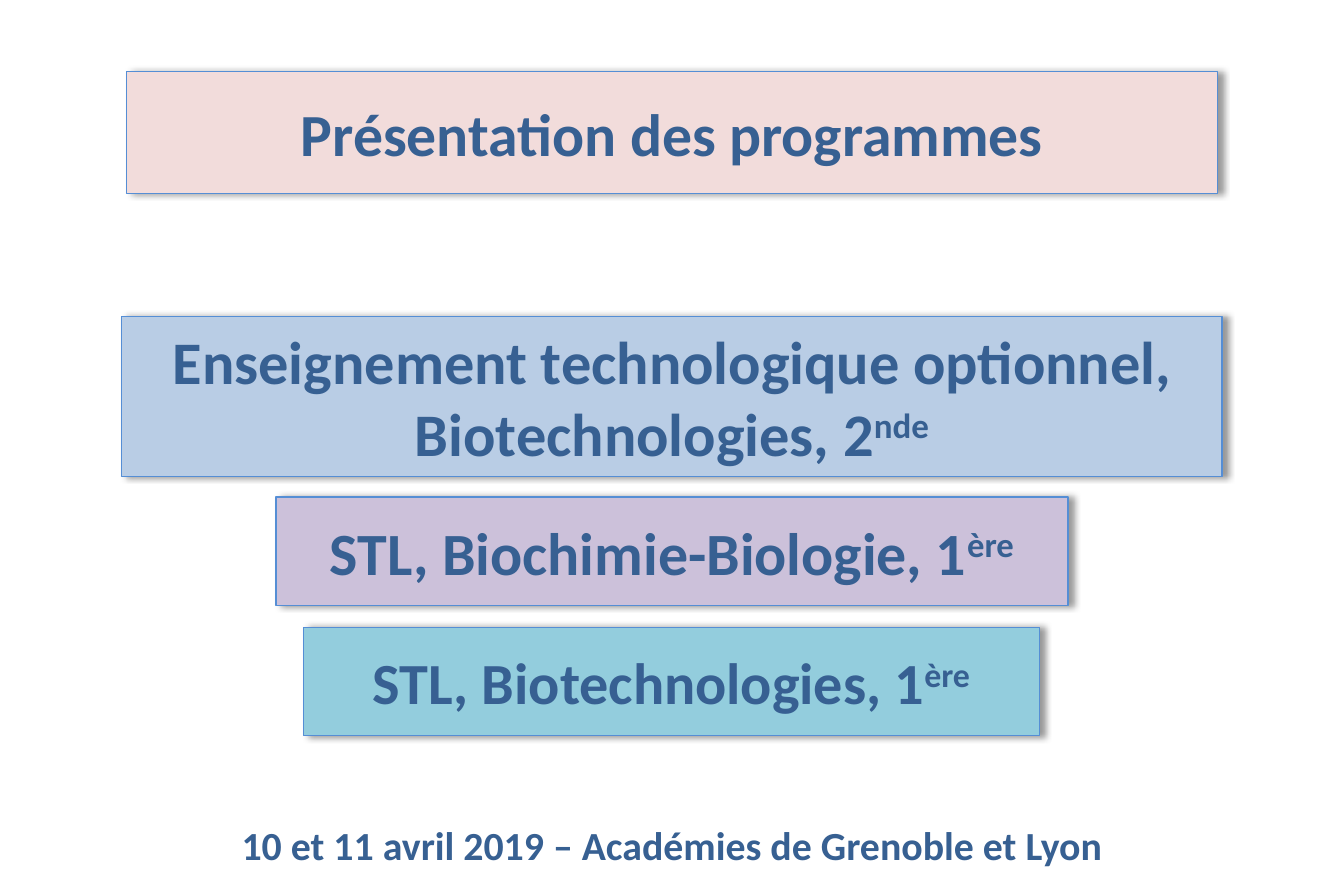
from dataclasses import dataclass

from lxml import etree
from pptx import Presentation
from pptx.dml.color import RGBColor
from pptx.enum.shapes import MSO_SHAPE
from pptx.enum.text import MSO_ANCHOR, MSO_AUTO_SIZE, PP_ALIGN
from pptx.oxml.ns import qn
from pptx.shapes.autoshape import Shape
from pptx.util import Inches, Pt

RECTANGLE = MSO_SHAPE.RECTANGLE
MIDDLE = MSO_ANCHOR.MIDDLE
NO_AUTOFIT = MSO_AUTO_SIZE.NONE
CENTER = PP_ALIGN.CENTER
TITLE_ONLY_LAYOUT = 5


@dataclass(frozen=True)
class Theme:
    font: str = "Calibri"
    text: str = "376092"
    outline: str = "558ED5"
    shadow: str = "000000"
    title_fill: str = "F2DCDB"
    optional_fill: str = "B9CDE5"
    biochemistry_fill: str = "CCC1DA"
    biotechnology_fill: str = "93CDDD"
    title_size: float = 36
    optional_size: float = 36.4
    biochemistry_size: float = 36.1
    biotechnology_size: float = 35.1
    footer_size: float = 24
    outline_width: float = 0.75


THEME = Theme()


@dataclass(frozen=True)
class Panel:
    left: float
    top: float
    width: float
    height: float
    fill: str
    size: float
    text: str
    superscript: str = ""


TITLE = Panel(1.06, 0.6, 9.13, 1.02, THEME.title_fill, THEME.title_size,
              "Présentation des programmes")
PROGRAMMES = [
    Panel(1.02, 2.65, 9.21, 1.34, THEME.optional_fill, THEME.optional_size,
          "Enseignement technologique optionnel, Biotechnologies, 2", "nde"),
    Panel(2.31, 4.16, 6.63, 0.91, THEME.biochemistry_fill, THEME.biochemistry_size,
          "STL, Biochimie-Biologie, 1", "ère"),
    Panel(2.54, 5.25, 6.16, 0.91, THEME.biotechnology_fill, THEME.biotechnology_size,
          "STL, Biotechnologies, 1", "ère"),
]


def write_text(box: Shape, text: str, size: float, superscript: str = "") -> None:
    frame = box.text_frame
    frame.word_wrap = True
    frame.auto_size = NO_AUTOFIT
    frame.vertical_anchor = MIDDLE
    para = frame.paragraphs[0]
    para.alignment = CENTER
    for content, baseline in ((text, 0), (superscript, 30000)):
        if not content:
            continue
        span = para.add_run()
        span.text = content
        span.font.name = THEME.font
        span.font.size = Pt(size)
        span.font.bold = True
        span.font.color.rgb = RGBColor.from_string(THEME.text)
        if baseline:
            span.font._element.set("baseline", str(baseline))


def add_shadow(box: Shape) -> None:
    box.shadow.inherit = False
    effects = box._element.spPr.find(qn("a:effectLst"))
    shadow = etree.SubElement(effects, qn("a:outerShdw"), blurRad=str(Pt(4)),
                              dist=str(Pt(3)), dir="0", algn="l", rotWithShape="0")
    color = etree.SubElement(shadow, qn("a:srgbClr"), val=THEME.shadow)
    etree.SubElement(color, qn("a:alpha"), val="40000")


def format_panel(box: Shape, panel: Panel) -> None:
    box.left, box.top = Inches(panel.left), Inches(panel.top)
    box.width, box.height = Inches(panel.width), Inches(panel.height)
    box.fill.solid()
    box.fill.fore_color.rgb = RGBColor.from_string(panel.fill)
    box.line.color.rgb = RGBColor.from_string(THEME.outline)
    box.line.width = Pt(THEME.outline_width)
    add_shadow(box)
    write_text(box, panel.text, panel.size, panel.superscript)


def main() -> None:
    deck = Presentation()
    deck.slide_width, deck.slide_height = Inches(11.25), Inches(7.5)
    page = deck.slides.add_slide(deck.slide_layouts[TITLE_ONLY_LAYOUT])

    # Date and place
    footer = page.shapes.add_textbox(Inches(0.88), Inches(6.82), Inches(9.49), Inches(0.5))
    write_text(footer, "10 et 11 avril 2019 – Académies de Grenoble et Lyon",
               THEME.footer_size)

    # Title
    format_panel(page.shapes.title, TITLE)

    # Programmes
    for panel in PROGRAMMES:
        box = page.shapes.add_shape(RECTANGLE, Inches(panel.left), Inches(panel.top),
                                    Inches(panel.width), Inches(panel.height))
        format_panel(box, panel)

    deck.save("out.pptx")


if __name__ == "__main__":
    main()
